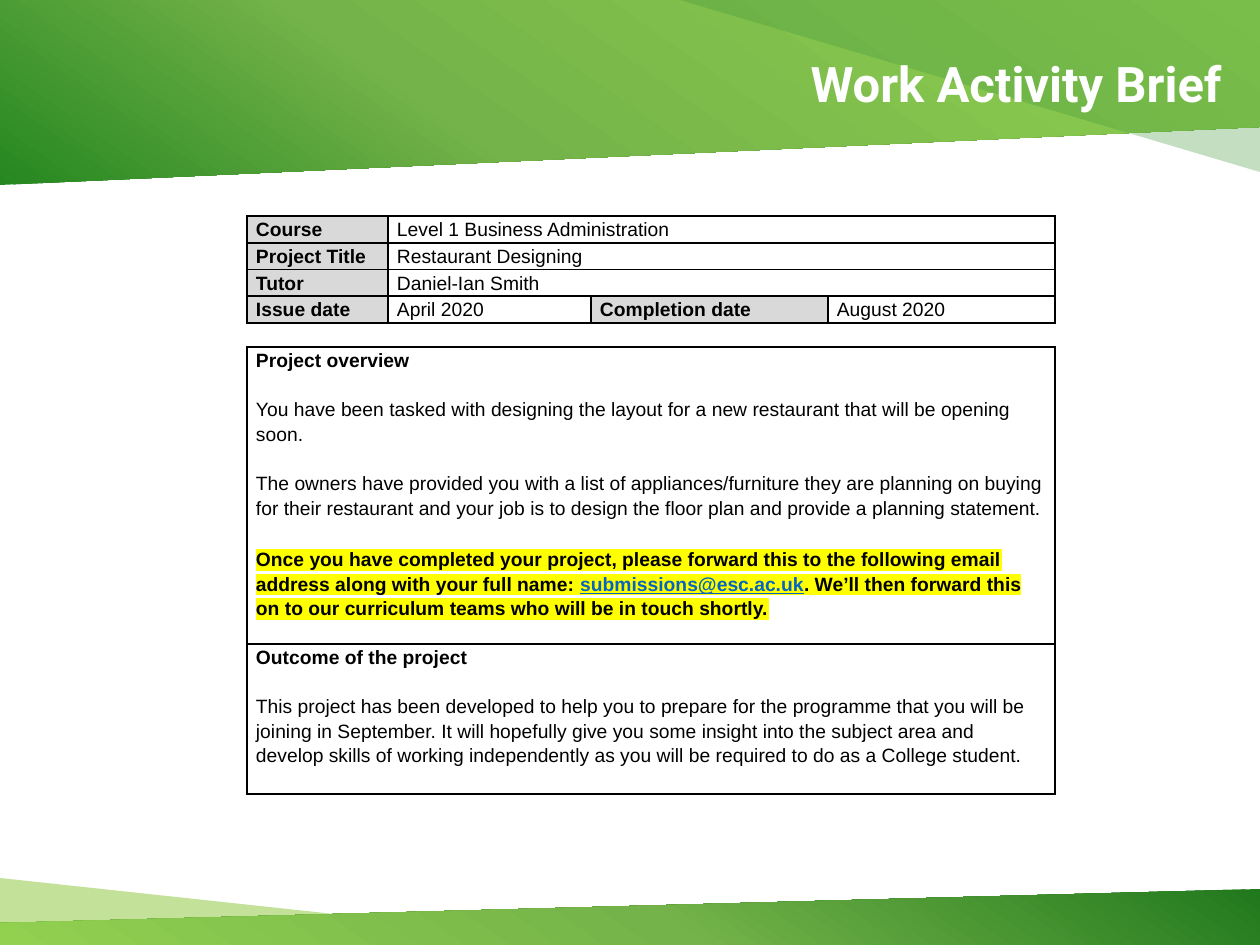
from itertools import pairwise
from lxml.etree import SubElement
from pptx import Presentation
from pptx.dml.color import RGBColor
from pptx.enum.text import MSO_ANCHOR, PP_ALIGN
from pptx.oxml import parse_xml
from pptx.oxml.ns import nsdecls, qn
from pptx.util import Pt

SCALE = 914400 // 126
BLACK, WHITE, GREY, YELLOW, BLUE = "000000", "FFFFFF", "D9D9D9", "FFFF00", "0563C1"
TITLE = "Work Activity Brief"

BANDS = [
    ([(0, 878), (622, 945), (0, 945)], [("94C947", 0, 55)], 0),
    ([(0, 923), (1260, 889), (1260, 945), (0, 945)],
     [("21791D", 0, 100), ("74B349", 48, 100), ("92D050", 100, 100)], 125),
    ([(1260, 127), (0, 185), (0, 0), (1260, 0)],
     [("268721", 0, 100), ("74B349", 36, 100), ("92D050", 100, 100)], 305),
    ([(1260, 172), (680, 0), (1260, 0)], [("43973D", 0, 31)], 0),
]

DETAILS = [
    ["Course", "Level 1 Business Administration"],
    ["Project Title", "Restaurant Designing"],
    ["Tutor", "Daniel-Ian Smith"],
    ["Issue date", "April 2020", "Completion date", "August 2020"],
]
DETAIL_COLS = [247, 388, 591, 828, 1055]
DETAIL_ROWS = [216, 243, 269, 295, 322]

PLAIN, BOLD = {}, {"bold": True}
MARKED = {"bold": True, "highlight": YELLOW}
EMAIL = {**MARKED, "color": BLUE, "underline": True}
BRIEF = [
    [
        (0, [("Project overview", BOLD)]),
        (14, [("You have been tasked with designing the layout for a new restaurant "
               "that will be opening soon.", PLAIN)]),
        (14, [("The owners have provided you with a list of appliances/furniture they are "
               "planning on buying for their restaurant and your job is to design the floor "
               "plan and provide a planning statement.", PLAIN)]),
        (15.5, [("Once you have completed your project, please forward this to the following "
                 "email address along with your full name: ", MARKED),
                ("submissions@esc.ac.uk", EMAIL),
                (". We’ll then forward this on to our curriculum teams who will be in touch "
                 "shortly.", MARKED)]),
    ],
    [
        (0, [("Outcome of the project", BOLD)]),
        (14, [("This project has been developed to help you to prepare for the programme that "
               "you will be joining in September. It will hopefully give you some insight into "
               "the subject area and develop skills of working independently as you will be "
               "required to do as a College student.", PLAIN)]),
    ],
]
BRIEF_COLS = [247, 1055]
BRIEF_ROWS = [347, 644, 794]


def px(n):
    return n * SCALE


def rgb(color):
    return RGBColor.from_string(color)


def add_band(points, stops, angle):
    builder = s.shapes.build_freeform(*map(px, points[0]), scale=1)
    builder.add_line_segments([(px(x), px(y)) for x, y in points[1:]], close=True)
    sp = builder.convert_to_shape()
    sp.shadow.inherit = False
    sp.line.fill.background()
    if len(stops) == 1:
        color, _, alpha = stops[0]
        sp.fill.solid()
        sp.fill.fore_color.rgb = rgb(color)
        clr = sp.element.spPr.find(qn("a:solidFill"))[0]
        SubElement(clr, qn("a:alpha"), val=str(alpha * 1000))
        return
    gs = "".join(f'<a:gs pos="{pos * 1000}"><a:srgbClr val="{color}"/></a:gs>'
                 for color, pos, _ in stops)
    grad = parse_xml(f'<a:gradFill {nsdecls("a")} rotWithShape="1"><a:gsLst>{gs}</a:gsLst>'
                     f'<a:lin ang="{angle * 60000}" scaled="0"/></a:gradFill>')
    sp.element.spPr.find(qn("a:custGeom")).addnext(grad)


def add_run(p, text, color=BLACK, size=11, font="Arial", bold=False,
            underline=False, highlight=None):
    r = p.add_run()
    r.text = text
    r.font.size, r.font.bold = Pt(size), bold
    r.font.color.rgb = rgb(color)
    if underline:
        r.font.underline = True
    if highlight:
        mark = SubElement(r.font._element, qn("a:highlight"))
        SubElement(mark, qn("a:srgbClr"), val=highlight)
    r.font.name = font


def add_grid(xs, ys):
    table = s.shapes.add_table(len(ys) - 1, len(xs) - 1, px(xs[0]), px(ys[0]),
                               px(xs[-1] - xs[0]), px(ys[-1] - ys[0])).table
    table.first_row = table.horz_banding = False
    for col, (a, b) in zip(table.columns, pairwise(xs)):
        col.width = px(b - a)
    for row, (a, b) in zip(table.rows, pairwise(ys)):
        row.height = px(b - a)
    for cell in table.iter_cells():
        cell.margin_left = cell.margin_right = px(9)
        cell.margin_top = cell.margin_bottom = 0
        tcPr = cell._tc.get_or_add_tcPr()
        for side in ("lnL", "lnR", "lnT", "lnB"):
            ln = SubElement(tcPr, qn(f"a:{side}"), w=str(Pt(1)))
            fill = SubElement(ln, qn("a:solidFill"))
            SubElement(fill, qn("a:srgbClr"), val=BLACK)
        fill_cell(cell, WHITE)
    return table


def fill_cell(cell, color):
    cell.fill.solid()
    cell.fill.fore_color.rgb = rgb(color)


def write_cell(cell, paragraphs):
    tf = cell.text_frame
    for i, (gap, runs) in enumerate(paragraphs):
        p = tf.add_paragraph() if i else tf.paragraphs[0]
        p.line_spacing = 1.15
        if gap:
            p.space_before = Pt(gap)
        for text, style in runs:
            add_run(p, text, **style)


prs = Presentation()
prs.slide_width, prs.slide_height = px(1260), px(945)
s = prs.slides.add_slide(prs.slide_layouts[6])

for band in BANDS:
    add_band(*band)

tf = s.shapes.add_textbox(px(237), px(48), px(997), px(78)).text_frame
tf.word_wrap = True
tf.vertical_anchor = MSO_ANCHOR.MIDDLE
p = tf.paragraphs[0]
p.alignment, p.line_spacing = PP_ALIGN.RIGHT, 0.9
add_run(p, TITLE, WHITE, 28, "Roboto", True)

details = add_grid(DETAIL_COLS, DETAIL_ROWS)
for i, row in enumerate(DETAILS):
    if len(row) == 2:
        details.cell(i, 1).merge(details.cell(i, 3))
    for j, text in enumerate(row):
        is_label = j % 2 == 0
        write_cell(details.cell(i, j), [(0, [(text, BOLD if is_label else PLAIN)])])
        if is_label:
            fill_cell(details.cell(i, j), GREY)

brief = add_grid(BRIEF_COLS, BRIEF_ROWS)
for i, paragraphs in enumerate(BRIEF):
    write_cell(brief.cell(i, 0), paragraphs)

prs.save("out.pptx")
